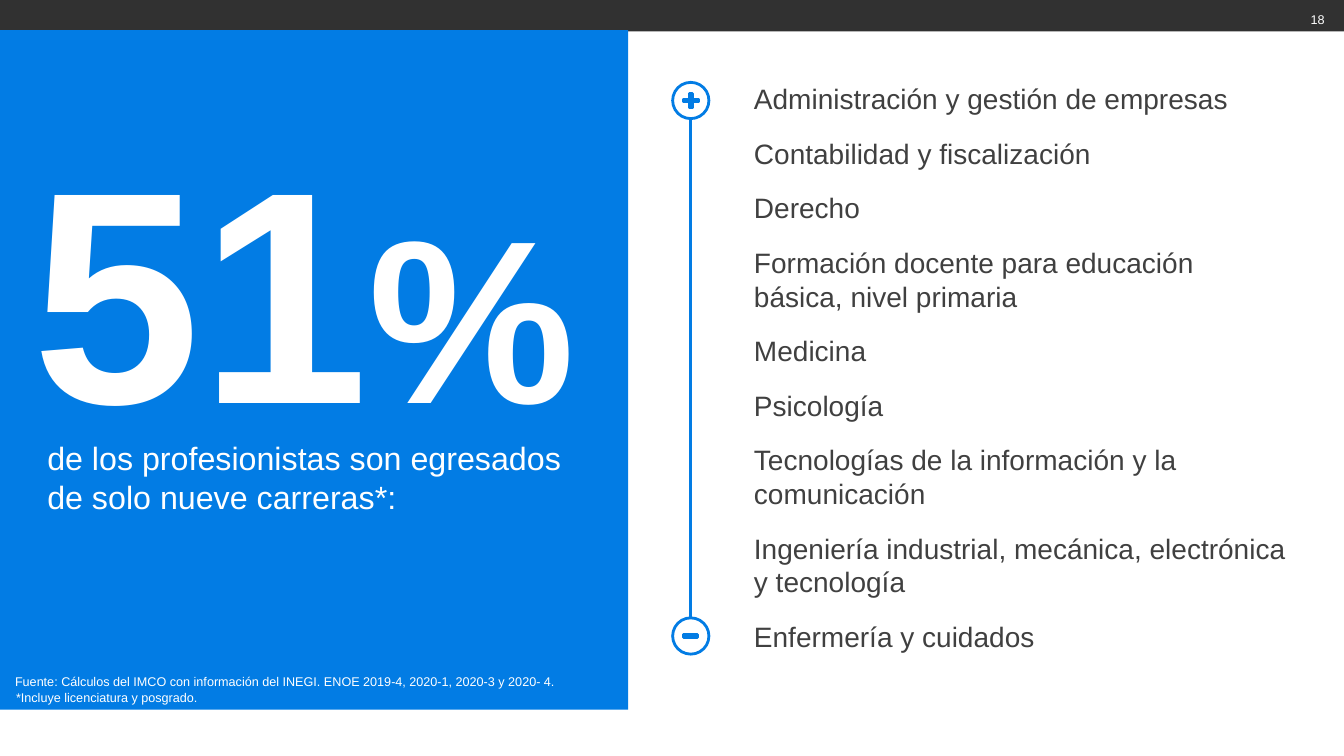
from dataclasses import dataclass

from lxml.etree import SubElement
from pptx import Presentation
from pptx.dml.color import RGBColor
from pptx.enum.shapes import MSO_CONNECTOR, MSO_SHAPE
from pptx.enum.text import MSO_ANCHOR, MSO_AUTO_SIZE, PP_ALIGN
from pptx.oxml.ns import qn
from pptx.util import Inches, Pt

BLUE = RGBColor(0x02, 0x7C, 0xE4)
BAR = RGBColor(0x26, 0x26, 0x26)
INK = RGBColor(0x40, 0x40, 0x40)
WHITE = RGBColor(0xFF, 0xFF, 0xFF)
FONT = "Arial"
WIDTH, HEIGHT = Inches(13.33), Inches(7.5)
LINE_WIDTH = Pt(2)

CAREERS = [
    "Administración y gestión de empresas",
    "Contabilidad y fiscalización",
    "Derecho",
    "Formación docente para educación básica, nivel primaria",
    "Medicina",
    "Psicología",
    "Tecnologías de la información y la comunicación",
    "Ingeniería industrial, mecánica, electrónica y tecnología",
    "Enfermería y cuidados",
]


@dataclass(frozen=True)
class Box:
    """Place and size, in percent of the slide's width and height."""
    x: float
    y: float
    w: float
    h: float

    def emu(self) -> tuple:
        return pct_x(self.x), pct_y(self.y), pct_x(self.w), pct_y(self.h)


@dataclass(frozen=True)
class TextBlock:
    box: Box
    lines: list
    size: float
    color: RGBColor = WHITE
    align: PP_ALIGN = PP_ALIGN.LEFT
    anchor: MSO_ANCHOR = MSO_ANCHOR.TOP
    grow: bool = True
    wrap: bool = True
    bold: bool = False
    space_after: float = 0
    line_spacing: float = 1.0
    margin: float = 0
    indent: float = 0


@dataclass(frozen=True)
class EndMark:
    y: float
    sign: MSO_SHAPE
    w: float
    h: float
    adjustment: float


def pct_x(share: float) -> int:
    return round(WIDTH * share / 100)


def pct_y(share: float) -> int:
    return round(HEIGHT * share / 100)


def centred(x: float, y: float, w: float, h: float) -> Box:
    return Box(x - w / 2, y - h / 2, w, h)


def add_shape(s, kind: MSO_SHAPE, box: Box, fill=None, line=None):
    sp = s.shapes.add_shape(kind, *box.emu())
    sp.shadow.inherit = False
    if fill is None:
        sp.fill.background()
    else:
        sp.fill.solid()
        sp.fill.fore_color.rgb = fill
    if line is None:
        sp.line.fill.background()
    else:
        sp.line.color.rgb = line
        sp.line.width = LINE_WIDTH
    return sp


def add_text(s, block: TextBlock):
    sp = s.shapes.add_textbox(*block.box.emu())
    tf = sp.text_frame
    tf.word_wrap = block.wrap
    tf.vertical_anchor = block.anchor
    tf.auto_size = MSO_AUTO_SIZE.SHAPE_TO_FIT_TEXT if block.grow else MSO_AUTO_SIZE.NONE
    for i, line in enumerate(block.lines):
        p = tf.paragraphs[0] if i == 0 else tf.add_paragraph()
        p.text = line
        pPr = p._p.get_or_add_pPr()
        pPr.set("marL", str(Inches(block.margin)))
        pPr.set("indent", str(Inches(block.indent)))
        p.alignment = block.align
        p.space_after = Pt(block.space_after)
        p.line_spacing = block.line_spacing
        p.font.name = FONT
        p.font.size = Pt(block.size)
        p.font.bold = block.bold
        p.font.color.rgb = block.color
    return sp


def add_line(s, x: float, top: float, bottom: float):
    line = s.shapes.add_connector(
        MSO_CONNECTOR.STRAIGHT, pct_x(x), pct_y(top), pct_x(x), pct_y(bottom))
    line.line.color.rgb = BLUE
    line.line.width = LINE_WIDTH
    SubElement(line._element.spPr, qn("a:effectLst"))


def add_scale(s):
    """Vertical scale running from the plus mark to the minus mark."""
    x, ring_w, ring_h = 51.4, 2.7, 4.8
    top = EndMark(13.3, MSO_SHAPE.MATH_PLUS, 1.5, 2.67, 0.15)
    bottom = EndMark(84.13, MSO_SHAPE.MATH_MINUS, 1.43, 1.6, 0.24)
    add_line(s, x, top.y + ring_h / 2, bottom.y - ring_h / 2)
    for mark in (top, bottom):
        sign = add_shape(s, mark.sign, centred(x, mark.y, mark.w, mark.h), BLUE, BLUE)
        sign.adjustments[0] = mark.adjustment
        add_shape(s, MSO_SHAPE.OVAL, centred(x, mark.y, ring_w, ring_h), line=BLUE)


def main():
    prs = Presentation()
    prs.slide_width, prs.slide_height = WIDTH, HEIGHT
    s = prs.slides.add_slide(prs.slide_layouts[6])

    # Top bar, slightly transparent, and blue panel
    bar = add_shape(s, MSO_SHAPE.RECTANGLE, Box(0, 0, 100, 4.15), BAR)
    color = bar._element.spPr.find(qn("a:solidFill"))[0]
    SubElement(color, qn("a:alpha"), val="95000")
    add_shape(s, MSO_SHAPE.RECTANGLE, Box(0, 4, 46.74, 89.87), BLUE)

    # Page number and source
    add_text(s, TextBlock(Box(76.8, 0.93, 22.5, 5.33), ["18"], 9,
                          align=PP_ALIGN.RIGHT, grow=False))
    source = ("Fuente: Cálculos del IMCO con información del INEGI. ENOE 2019-4, "
              "2020-1, 2020-3 y 2020- 4. *Incluye licenciatura y posgrado.")
    add_text(s, TextBlock(Box(0.38, 87.6, 44.56, 6.27), [source], 9,
                          anchor=MSO_ANCHOR.BOTTOM, grow=False,
                          margin=0.01, indent=-0.01))

    # Key figure with a smaller percent sign
    figure = add_text(s, TextBlock(Box(1.65, 29.73, 42.3, 30.4), ["51"], 216,
                                   bold=True, wrap=False, line_spacing=0.6))
    r = figure.text_frame.paragraphs[0].add_run()
    r.text = "%"
    r.font.size = Pt(166)

    # Careers and their scale
    add_text(s, TextBlock(Box(55.29, 10.13, 41.26, 77.6), CAREERS, 20, INK,
                          space_after=15, margin=0.01))
    add_scale(s)

    # Caption of the key figure
    caption = "de los profesionistas son egresados de solo nueve carreras*:"
    add_text(s, TextBlock(Box(2.78, 57.33, 40.14, 11.73), [caption], 23))

    prs.save("out.pptx")


if __name__ == "__main__":
    main()
